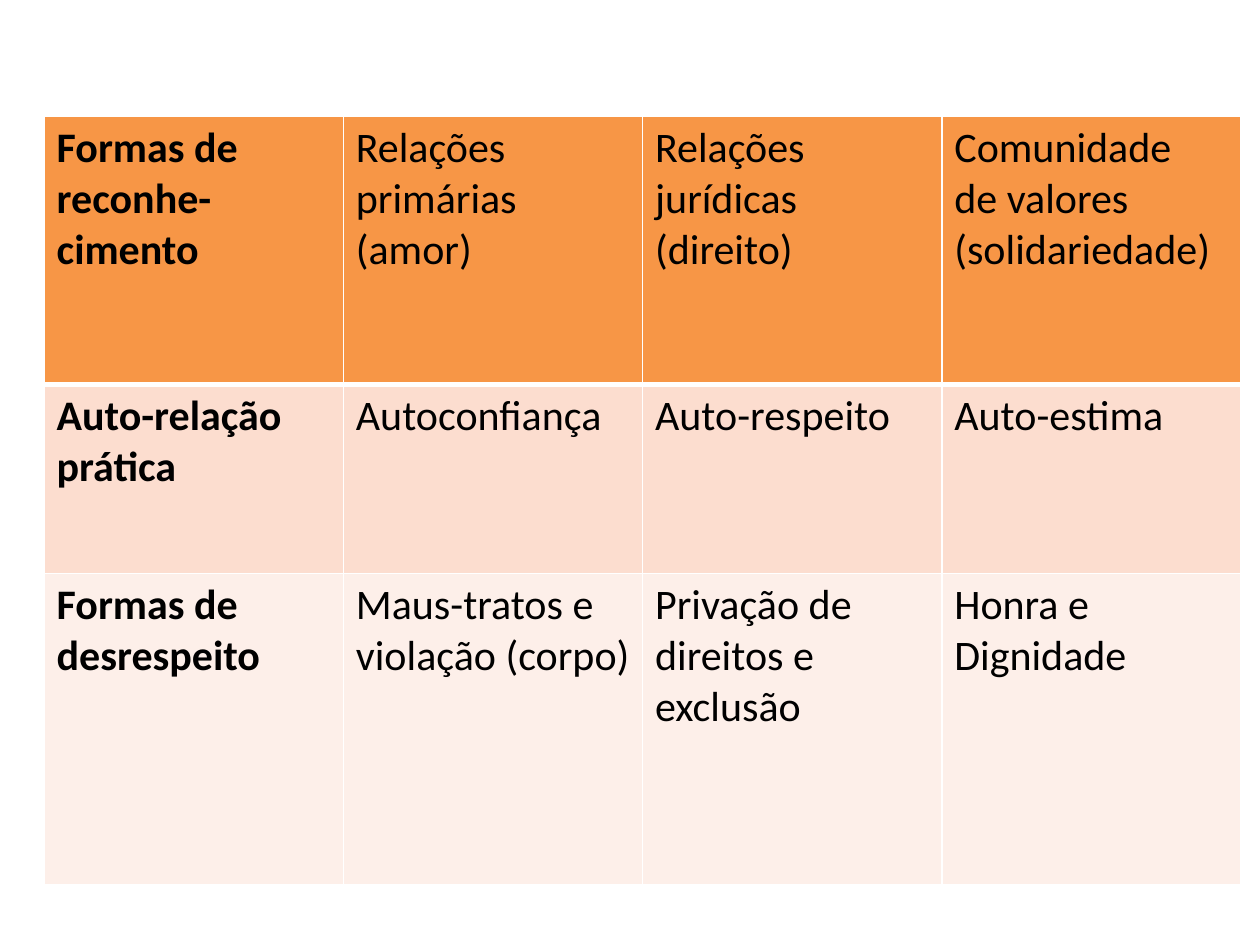
from lxml.etree import SubElement
from pptx import Presentation
from pptx.dml.color import RGBColor
from pptx.oxml.ns import qn
from pptx.util import Inches, Pt

BLACK = RGBColor(0x00, 0x00, 0x00)
WHITE = RGBColor(0xFF, 0xFF, 0xFF)
ORANGE = RGBColor(0xF7, 0x96, 0x46)
PEACH = RGBColor(0xFC, 0xDD, 0xCF)
PALE_PEACH = RGBColor(0xFD, 0xEF, 0xE9)

RECOGNITION_ROWS = [
    (2.13, ORANGE, ["Formas de reconhe-\ncimento", "Relações\nprimárias\n(amor)",
                    "Relações\njurídicas\n(direito)",
                    "Comunidade\nde valores (solidariedade)"]),
    (1.5, PEACH, ["Auto-relação\nprática", "Autoconfiança",
                  "Auto-respeito", "Auto-estima"]),
    (2.47, PALE_PEACH, ["Formas de desrespeito", "Maus-tratos e violação (corpo)",
                        "Privação de direitos e exclusão", "Honra e\nDignidade"]),
]


def set_borders(cell, top, bottom):
    """Draw white cell borders, with the top and bottom widths in points."""
    properties = cell._tc.get_or_add_tcPr()
    edges = [("a:lnL", 1), ("a:lnR", 1), ("a:lnT", top), ("a:lnB", bottom)]
    for position, (tag, width) in enumerate(edges):
        line = SubElement(properties, qn(tag), w=str(Pt(width)))
        fill = SubElement(line, qn("a:solidFill"))
        SubElement(fill, qn("a:srgbClr"), val=str(WHITE))
        properties.insert(position, line)


def write_cell(cell, text, fill, bold):
    """Fill a cell and write one paragraph for each line of text."""
    cell.fill.solid()
    cell.fill.fore_color.rgb = fill
    frame = cell.text_frame
    for index, line in enumerate(text.split("\n")):
        paragraph = frame.add_paragraph() if index else frame.paragraphs[0]
        run = paragraph.add_run()
        run.text = line
        run.font.name = "Calibri"
        run.font.size = Pt(24)
        run.font.bold = bold
        run.font.color.rgb = BLACK


def add_recognition_table(slide, left, top, width, height):
    """Place the table of forms of recognition in the given box."""
    column_count = len(RECOGNITION_ROWS[0][2])
    table = slide.shapes.add_table(
        len(RECOGNITION_ROWS), column_count, left, top, width, height).table
    for column in table.columns:
        column.width = width // column_count
    for row, (row_height, fill, texts) in enumerate(RECOGNITION_ROWS):
        table.rows[row].height = Inches(row_height)
        for column, text in enumerate(texts):
            cell = table.cell(row, column)
            write_cell(cell, text, fill, bold=column == 0)
            set_borders(cell, top=3 if row == 1 else 1, bottom=3 if row == 0 else 1)


def main():
    """Build the slide and save it."""
    deck = Presentation()
    deck.slide_width, deck.slide_height = Inches(10), Inches(7.5)
    slide = deck.slides.add_slide(deck.slide_layouts[6])
    add_recognition_table(slide, Inches(0.35), Inches(0.92), Inches(9.5), Inches(6.1))
    deck.save("out.pptx")


if __name__ == "__main__":
    main()
